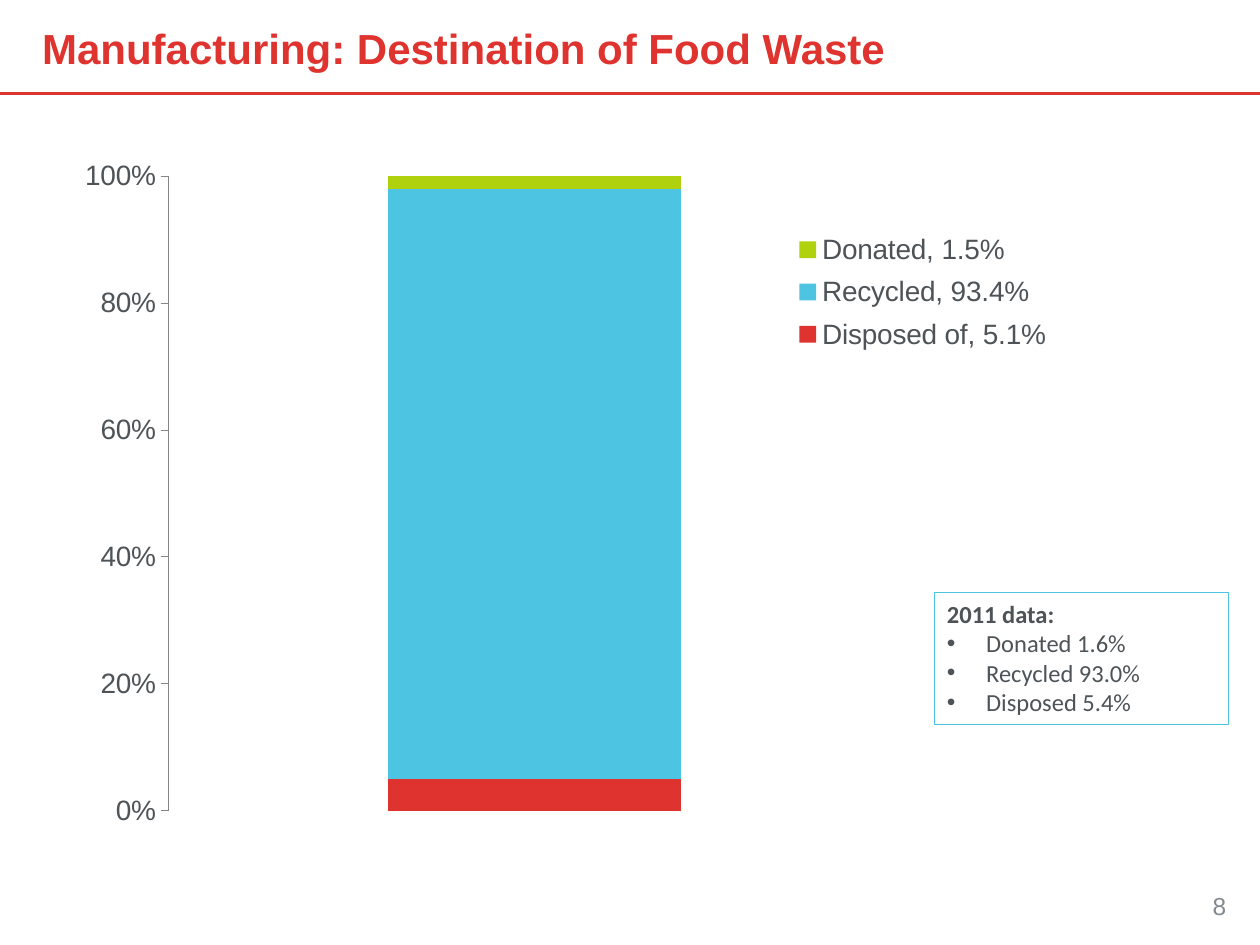
from lxml import etree
from pptx import Presentation
from pptx import util as u
from pptx.chart.data import CategoryChartData
from pptx.dml.color import RGBColor
from pptx.enum import chart as ch, shapes, text
from pptx.oxml import parse_xml
from pptx.oxml.ns import nsdecls, qn

RED, BLUE, GREEN = "DF332F", "4DC5E2", "B0D20E"
DARK, GREY, AXIS = "4D5357", "828A8F", "868686"
SHARES = [("Disposed of, 5.1%", 5, RED), ("Recycled, 93.4%", 93, BLUE),
          ("Donated, 1.5%", 2, GREEN)]
PAST = ["Donated 1.6%", "Recycled 93.0%", "Disposed 5.4%"]


def paint(part, tint):
    """Give a fill, line fill or font colour a hex tint."""
    if hasattr(part, "solid"):
        part.solid()
        part = part.fore_color
    part.rgb = RGBColor.from_string(tint)


def write(para, words, size, tint, bold=False, face="Arial"):
    """Add one styled run to a paragraph."""
    run = para.add_run()
    run.text = words
    font = run.font
    font.name, font.size, font.bold = face, u.Pt(size), bold
    paint(font.color, tint)


def label(slide, box, words, size, tint, bold=False, align=None, anchor=None):
    """Place a line of text without margins."""
    frame = slide.shapes.add_textbox(*map(u.Cm, box)).text_frame
    frame.word_wrap = True
    frame.margin_left = frame.margin_right = frame.margin_top = frame.margin_bottom = 0
    frame.vertical_anchor = anchor
    para = frame.paragraphs[0]
    para.alignment = align
    write(para, words, size, tint, bold)


def header(slide, box):
    """Place the title and the rule under it."""
    left, top, wide, high = box
    foot = u.Cm(top + high)
    rule = slide.shapes.add_connector(
        shapes.MSO_CONNECTOR.STRAIGHT, u.Cm(left), foot, u.Cm(left + wide), foot)
    rule.line.width = u.Pt(1.5)
    paint(rule.line.fill, RED)
    etree.SubElement(rule._element.spPr, qn("a:effectLst"))
    label(slide, (left + 0.85, top, wide - 1.75, high + 0.04),
          "Manufacturing: Destination of Food Waste", 24, RED, True,
          anchor=text.MSO_ANCHOR.MIDDLE)


def layout(box, part, inner=False):
    """Build a manual layout for a part placed in cm within the chart box."""
    target = '<c:layoutTarget val="inner"/>' if inner else ""
    modes = '<c:xMode val="edge"/><c:yMode val="edge"/>'
    sizes = "".join(f'<c:{k} val="{v / full:.4f}"/>'
                    for k, v, full in zip("xywh", part, box[2:] * 2))
    return parse_xml(f'<c:layout {nsdecls("c")}><c:manualLayout>{target}{modes}{sizes}'
                     '</c:manualLayout></c:layout>')


def clear(node):
    """Drop any layout already held by a chart part."""
    for old in node.findall(qn("c:layout")):
        node.remove(old)


def stack(slide, box):
    """Place the stacked column with its legend."""
    data = CategoryChartData(number_format="0")
    data.categories = ["1"]
    for name, share, _ in SHARES:
        data.add_series(name, [share])
    chart = slide.shapes.add_chart(
        ch.XL_CHART_TYPE.COLUMN_STACKED_100, *map(u.Cm, box), data).chart
    chart.has_title = False
    chart.font.name, chart.font.size = "Arial", u.Pt(16)
    paint(chart.font.color, DARK)

    plot = chart.plots[0]
    plot.gap_width, plot.overlap, plot.vary_by_categories = 150, 100, False
    for bar, (_, _, tint) in zip(plot.series, SHARES):
        paint(bar.format.fill, tint)

    chart.category_axis.visible = False
    axis = chart.value_axis
    axis.has_major_gridlines = False
    axis.minimum_scale, axis.maximum_scale, axis.major_unit = 0, 1, 0.2
    axis.major_tick_mark = ch.XL_TICK_MARK.OUTSIDE
    axis.tick_labels.number_format = "0%"
    axis.tick_labels.number_format_is_linked = False
    axis.format.line.width = u.Pt(0.5)
    paint(axis.format.line.fill, AXIS)

    chart.has_legend = True
    key = chart.legend
    key.position = ch.XL_LEGEND_POSITION.RIGHT
    key.include_in_layout = False
    key.font.name, key.font.size = "Arial", u.Pt(16)
    paint(key.font.color, DARK)
    root = key._element
    clear(root)
    root.find(qn("c:legendPos")).addnext(layout(box, (14.63, 1.52, 5.4, 2.8)))
    area = chart._chartSpace.chart.plotArea
    clear(area)
    area.insert(0, layout(box, (2.12, 0.58, 14.76, 12.8), True))


def note(slide, box):
    """Place the framed list of earlier figures."""
    card = slide.shapes.add_shape(shapes.MSO_SHAPE.RECTANGLE, *map(u.Cm, box))
    card.shadow.inherit = False
    card.fill.background()
    card.line.width = u.Pt(0.75)
    paint(card.line.fill, BLUE)
    frame = card.text_frame
    frame.word_wrap = True
    frame.vertical_anchor = text.MSO_ANCHOR.TOP
    head = frame.paragraphs[0]
    head.alignment = text.PP_ALIGN.LEFT
    write(head, "2011 data:", 14, DARK, True, "Calibri")
    for item in PAST:
        para = frame.add_paragraph()
        para.alignment = text.PP_ALIGN.LEFT
        prop = para._p.get_or_add_pPr()
        prop.set("marL", str(u.Cm(0.79)))
        prop.set("indent", str(-u.Cm(0.79)))
        etree.SubElement(prop, qn("a:buFont")).set("typeface", "Arial")
        etree.SubElement(prop, qn("a:buChar")).set("char", "•")
        write(para, item, 14, DARK, face="Calibri")


def main():
    """Build and save the slide."""
    deck = Presentation()
    deck.slide_width, deck.slide_height = u.Cm(25.4), u.Cm(19.05)
    slide = deck.slides.add_slide(deck.slide_layouts[6])
    header(slide, (0, 0, 25.4, 1.88))
    label(slide, (18.8, 17.96, 5.92, 0.84), "8", 14, GREY, align=text.PP_ALIGN.RIGHT)
    stack(slide, (1.27, 2.97, 22.86, 13.97))
    note(slide, (18.84, 11.95, 5.93, 2.65))
    deck.save("out.pptx")


if __name__ == "__main__":
    main()
